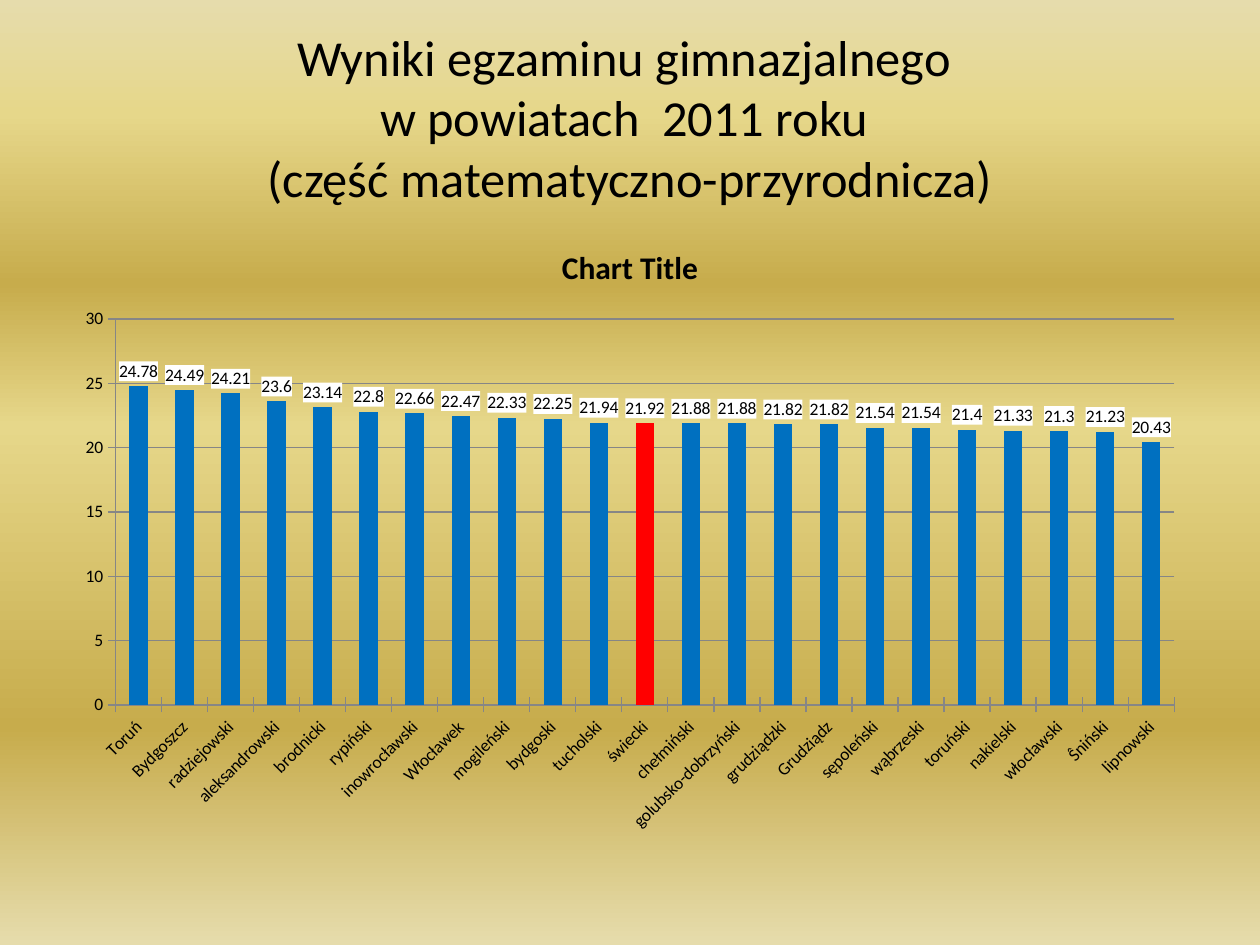
from lxml.etree import SubElement
from pptx import Presentation
from pptx.chart.data import CategoryChartData
from pptx.dml.color import RGBColor
from pptx.enum.chart import XL_CHART_TYPE, XL_LABEL_POSITION, XL_TICK_MARK
from pptx.enum.text import MSO_ANCHOR, PP_ALIGN
from pptx.oxml import parse_xml
from pptx.oxml.ns import nsdecls, qn
from pptx.util import Inches, Pt

FONT = "Calibri"
COLORS = {
    "text": "000000",
    "bar": "0070C0",
    "highlight": "FF0000",
    "grid": "868686",
    "label": "FFFFFF",
    "pale": "E6DCAC",
    "light": "E6D78A",
    "gold": "C7AC4C",
}
BACKGROUND_STOPS = [(0, "pale"), (12, "light"), (30, "gold"),
                    (45, "light"), (77, "gold"), (100, "pale")]
TITLE_LINES = ["Wyniki egzaminu gimnazjalnego ", "w powiatach  2011 roku ",
               "(część matematyczno-przyrodnicza)"]
HIGHLIGHTED_COUNTY = "świecki"
RESULTS = {
    "Toruń": 24.78, "Bydgoszcz": 24.49, "radziejowski": 24.21,
    "aleksandrowski": 23.6, "brodnicki": 23.14, "rypiński": 22.8,
    "inowrocławski": 22.66, "Włocławek": 22.47, "mogileński": 22.33,
    "bydgoski": 22.25, "tucholski": 21.94, "świecki": 21.92,
    "chełmiński": 21.88, "golubsko-dobrzyński": 21.88,
    "grudziądzki": 21.82, "Grudziądz": 21.82, "sępoleński": 21.54,
    "wąbrzeski": 21.54, "toruński": 21.4, "nakielski": 21.33,
    "włocławski": 21.3, "Ŝniński": 21.23, "lipnowski": 20.43,
}


def rgb(name):
    return RGBColor.from_string(COLORS[name])


def set_format(target, values):
    for name, value in values.items():
        setattr(target, name, value)


def set_font(font, size, bold=False):
    set_format(font, {"name": FONT, "size": Pt(size), "bold": bold})
    font.color.rgb = rgb("text")


def paint_background(slide):
    """Fill the background with a vertical gradient of several stops."""
    fill = slide.background.fill
    fill.gradient()
    fill.gradient_angle = 270
    stops = slide.element.find(".//" + qn("a:gsLst"))
    for stop in list(stops):
        stops.remove(stop)
    for percent, color in BACKGROUND_STOPS:
        stop = SubElement(stops, qn("a:gs"), pos=str(percent * 1000))
        SubElement(stop, qn("a:srgbClr"), val=COLORS[color])


def add_title(slide):
    title = slide.shapes.add_textbox(Inches(0.5), Inches(0.3), Inches(9), Inches(1.25))
    frame = title.text_frame
    set_format(frame, {"word_wrap": True, "vertical_anchor": MSO_ANCHOR.MIDDLE})
    paragraph = frame.paragraphs[0]
    paragraph.alignment = PP_ALIGN.CENTER
    for number, line in enumerate(TITLE_LINES):
        if number:
            paragraph.add_line_break()
        run = paragraph.add_run()
        run.text = line
        set_font(run.font, 28.8)


def style_axes(chart):
    category_axis, value_axis = chart.category_axis, chart.value_axis
    for axis in (category_axis, value_axis):
        axis.major_tick_mark = XL_TICK_MARK.CROSS
        set_font(axis.tick_labels.font, 10)
        axis.format.line.color.rgb = rgb("grid")
    set_format(value_axis, {"minimum_scale": 0, "maximum_scale": 30,
                            "major_unit": 5, "has_major_gridlines": True})
    value_axis.major_gridlines.format.line.color.rgb = rgb("grid")
    category_axis._element.find(".//" + qn("a:bodyPr")).set("rot", "-2700000")


def style_labels(plot):
    """Show each value above its bar on a white ground."""
    plot.has_data_labels = True
    labels = plot.data_labels
    set_format(labels, {"show_value": True, "position": XL_LABEL_POSITION.OUTSIDE_END})
    set_font(labels.font, 10)
    ground = parse_xml(
        f'<c:spPr {nsdecls("c", "a")}><a:solidFill>'
        f'<a:srgbClr val="{COLORS["label"]}"/></a:solidFill></c:spPr>')
    labels._element.find(qn("c:txPr")).addprevious(ground)


def add_results_chart(slide):
    data = CategoryChartData()
    data.categories = list(RESULTS)
    data.add_series("Series 1", list(RESULTS.values()))
    chart = slide.shapes.add_chart(
        XL_CHART_TYPE.COLUMN_CLUSTERED, Inches(0.5), Inches(1.75),
        Inches(9), Inches(4.95), data).chart
    set_font(chart.font, 10)
    set_format(chart, {"has_legend": False, "has_title": True})
    heading = chart.chart_title.text_frame
    heading.text = "Chart Title"
    set_font(heading.paragraphs[0].runs[0].font, 18, bold=True)
    style_axes(chart)

    plot = chart.plots[0]
    set_format(plot, {"gap_width": 150, "vary_by_categories": False})
    bars = plot.series[0]
    highlighted_bar = bars.points[list(RESULTS).index(HIGHLIGHTED_COUNTY)]
    for part, color in ((bars, "bar"), (highlighted_bar, "highlight")):
        part.format.fill.solid()
        part.format.fill.fore_color.rgb = rgb(color)
    style_labels(plot)


def main():
    presentation = Presentation()
    set_format(presentation, {"slide_width": Inches(10), "slide_height": Inches(7.5)})
    slide = presentation.slides.add_slide(presentation.slide_layouts[6])
    paint_background(slide)
    add_title(slide)
    add_results_chart(slide)
    presentation.save("out.pptx")


if __name__ == "__main__":
    main()
